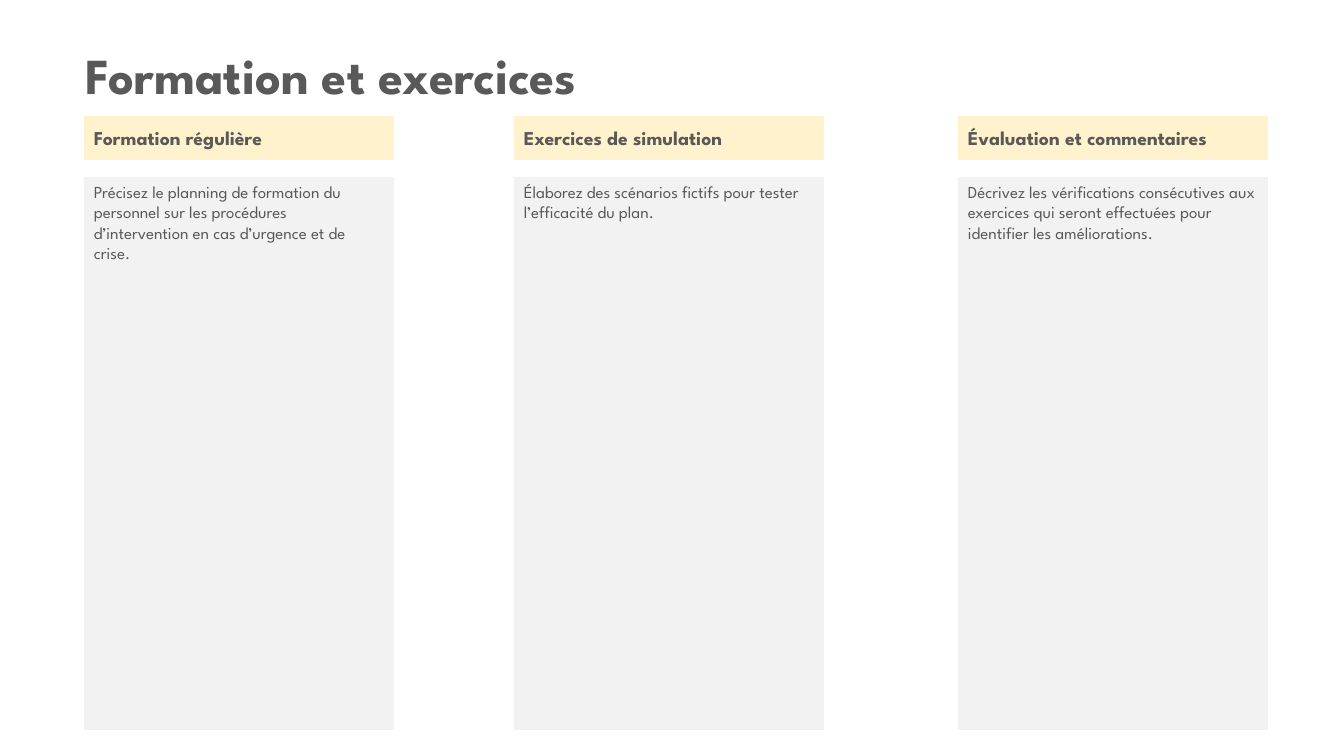
from pptx import Presentation
from pptx.dml.color import RGBColor
from pptx.enum.shapes import MSO_SHAPE
from pptx.enum.text import MSO_ANCHOR, PP_ALIGN
from pptx.util import Pt

RECT = MSO_SHAPE.RECTANGLE
TOP, MIDDLE = MSO_ANCHOR.TOP, MSO_ANCHOR.MIDDLE
LEFT = PP_ALIGN.LEFT

EMU_PER_PX = 914400 / 100.8
SLIDE_W, SLIDE_H = 1344, 756

GREY = RGBColor(0x59, 0x59, 0x59)
CREAM = RGBColor(0xFF, 0xF2, 0xCC)
PALE = RGBColor(0xF2, 0xF2, 0xF2)

COLUMN_W = 310
HEADER_TOP, HEADER_H = 116, 44
BODY_TOP, BODY_H = 177, 553

COLUMNS = [
    (84, "Formation régulière",
     "Précisez le planning de formation du personnel sur les procédures "
     "d’intervention en cas d’urgence et de crise."),
    (514, "Exercices de simulation",
     "Élaborez des scénarios fictifs pour tester l’efficacité du plan."),
    (958, "Évaluation et commentaires",
     "Décrivez les vérifications consécutives aux exercices qui seront "
     "effectuées pour identifier les améliorations."),
]


def px(*lengths):
    """Turn px lengths into EMU."""
    return [round(n * EMU_PER_PX) for n in lengths]


class SlideBuilder:
    font = "League Spartan"
    color = GREY

    def __init__(self, slide):
        self.s = slide

    def set_text(self, sp, text, size, bold, anchor):
        tf = sp.text_frame
        tf.word_wrap = True
        tf.vertical_anchor = anchor
        p = tf.paragraphs[0]
        p.alignment = LEFT
        r = p.add_run()
        r.text = text
        r.font.name = self.font
        r.font.size = Pt(size)
        r.font.bold = bold
        r.font.color.rgb = self.color

    def text(self, x, y, w, h, text, size, bold=False):
        sp = self.s.shapes.add_textbox(*px(x, y, w, h))
        self.set_text(sp, text, size, bold, TOP)

    def box(self, x, y, w, h, fill, text, size, bold=False, anchor=TOP):
        sp = self.s.shapes.add_shape(RECT, *px(x, y, w, h))
        sp.shadow.inherit = False
        sp.fill.solid()
        sp.fill.fore_color.rgb = fill
        sp.line.fill.background()
        self.set_text(sp, text, size, bold, anchor)


def main():
    prs = Presentation()
    prs.slide_width, prs.slide_height = px(SLIDE_W, SLIDE_H)
    builder = SlideBuilder(prs.slides.add_slide(prs.slide_layouts[6]))

    builder.text(76, 39, 1231, 72, "Formation et exercices", 36, bold=True)
    for x, heading, body in COLUMNS:
        builder.box(x, HEADER_TOP, COLUMN_W, HEADER_H, CREAM, heading, 14,
                    bold=True, anchor=MIDDLE)
        builder.box(x, BODY_TOP, COLUMN_W, BODY_H, PALE, body, 12)

    prs.save("out.pptx")


if __name__ == "__main__":
    main()
